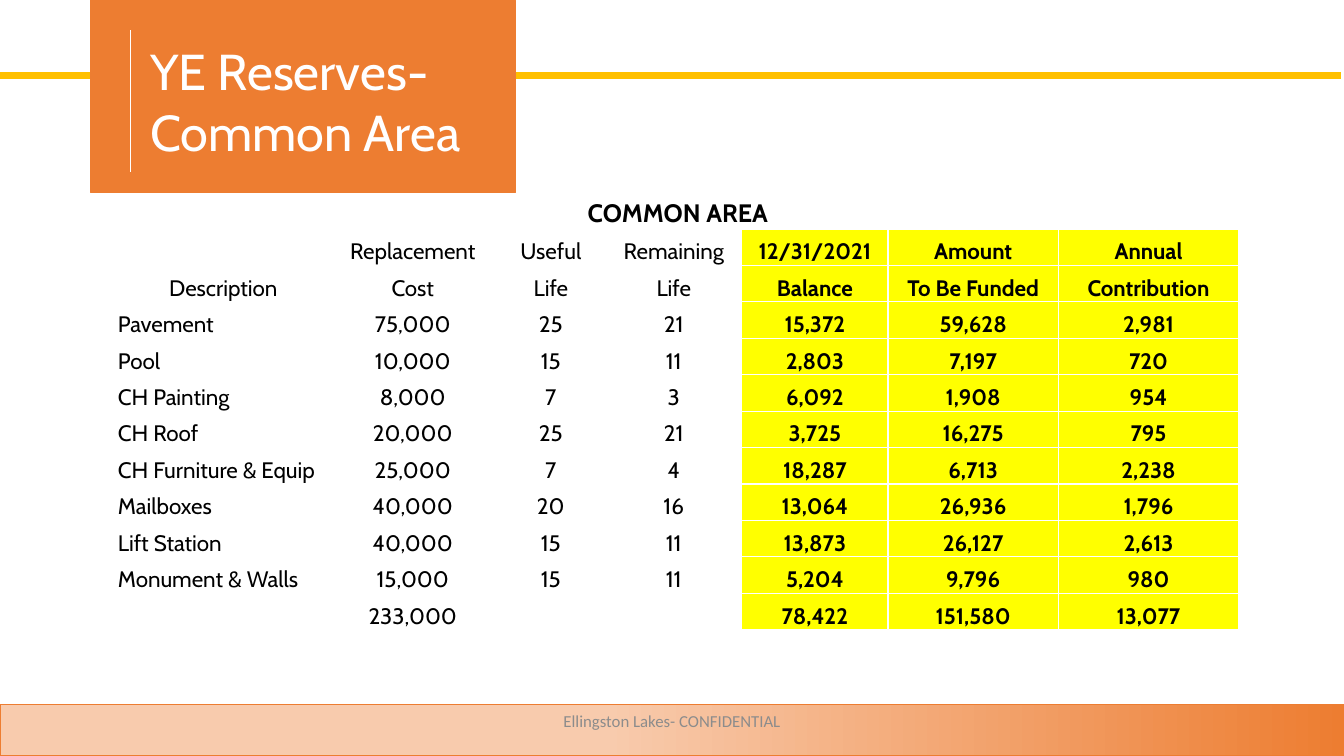
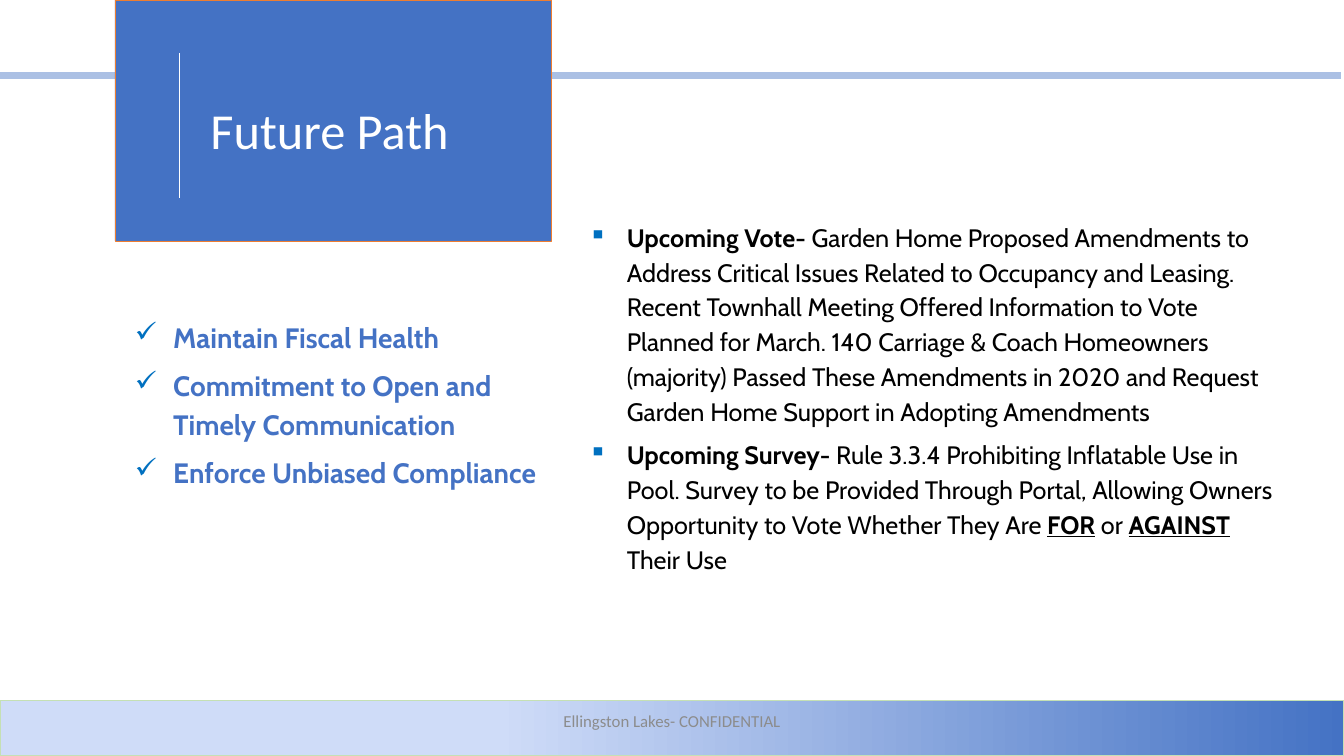
from dataclasses import dataclass

from lxml.etree import SubElement
from pptx import Presentation
from pptx.dml.color import RGBColor
from pptx.enum.shapes import MSO_CONNECTOR, MSO_SHAPE
from pptx.enum.text import MSO_ANCHOR, PP_ALIGN
from pptx.oxml import parse_xml
from pptx.oxml.ns import nsdecls, qn
from pptx.slide import Slide
from pptx.table import _Cell
from pptx.text.text import Font, TextFrame
from pptx.util import Emu, Inches, Pt

# Grid: 80 columns by 45 rows
SLIDE_WIDTH, SLIDE_HEIGHT = Inches(13.33), Inches(7.5)
COLUMNS, ROWS = 80, 45

# Colours and fonts
WHITE, BLACK, GREY = "FFFFFF", "000000", "8C8C8C"
ORANGE, GOLD, YELLOW = "ED7D31", "FFC000", "FFFF00"
BLUE, BULLET_BLUE = "4472C4", "0070C0"
HEADING_FONT, PLAIN_FONT = "Cabin", "Calibri"
FOOTER_TEXT = "Ellingston Lakes- CONFIDENTIAL"


@dataclass(frozen=True)
class Box:
    """An area in grid columns and rows."""
    left: float
    top: float
    width: float
    height: float


@dataclass(frozen=True)
class Theme:
    """What differs between the frames of the slides."""
    band: str
    block: Box
    block_fill: str
    title: Box
    title_font: str
    rule_left: float
    rule_top: float
    rule_bottom: float
    footer_top: float
    footer_start: float
    footer_light: str
    footer_dark: str
    footer_line: str


@dataclass(frozen=True)
class Run:
    text: str
    bold: bool = False
    underline: bool = False


@dataclass(frozen=True)
class BulletList:
    box: Box
    mark: str
    size: float
    color: str
    items: tuple[tuple[Run, ...], ...]


RESERVES_THEME = Theme(
    band=GOLD, block=Box(5.4, 0, 25.3, 11.46), block_fill=ORANGE,
    title=Box(8.34, 2.1, 22.4, 8.5), title_font=HEADING_FONT,
    rule_left=7.74, rule_top=1.8, rule_bottom=10.26,
    footer_top=41.94, footer_start=0.45, footer_light="F8CBAD",
    footer_dark=ORANGE, footer_line=ORANGE)

FUTURE_THEME = Theme(
    band="ABC0E4", block=Box(6.84, 0, 26, 14.34), block_fill=BLUE,
    title=Box(11.94, 5.6, 17.3, 4.2), title_font=PLAIN_FONT,
    rule_left=10.7, rule_top=3.18, rule_bottom=11.8,
    footer_top=41.7, footer_start=0.37, footer_light="CFDCF8",
    footer_dark=BLUE, footer_line="C5E0B4")

TABLE_LEFT, TABLE_TOP, TABLE_ROW = 6.96, 11.46, 2.17
TABLE_COLUMNS = (12.66, 9.9, 6.54, 8.1, 8.7, 10.14, 10.74)
HEADER_ROWS, FIRST_HIGHLIGHT = 3, 4
RESERVES = (
    ("COMMON AREA", "", "", "", "", "", ""),
    ("", "Replacement", "Useful", "Remaining", "12/31/2021", "Amount", "Annual"),
    ("Description", "Cost", "Life", "Life", "Balance", "To Be Funded", "Contribution"),
    ("Pavement", "75,000", "25", "21", "15,372", "59,628", "2,981"),
    ("Pool", "10,000", "15", "11", "2,803", "7,197", "720"),
    ("CH Painting", "8,000", "7", "3", "6,092", "1,908", "954"),
    ("CH Roof", "20,000", "25", "21", "3,725", "16,275", "795"),
    ("CH Furniture & Equip", "25,000", "7", "4", "18,287", "6,713", "2,238"),
    ("Mailboxes", "40,000", "20", "16", "13,064", "26,936", "1,796"),
    ("Lift Station", "40,000", "15", "11", "13,873", "26,127", "2,613"),
    ("Monument & Walls", "15,000", "15", "11", "5,204", "9,796", "980"),
    ("", "233,000", "", "", "78,422", "151,580", "13,077"),
)

GOALS = BulletList(
    Box(7.44, 18.48, 26.64, 16.9), "✓", 20, BLUE,
    ((Run("Maintain Fiscal Health", bold=True),),
     (Run("Commitment to Open and Timely Communication", bold=True),),
     (Run("Enforce Unbiased Compliance", bold=True),)))

UPCOMING = BulletList(
    Box(34.44, 12.66, 42.66, 27.8), "▪", 18, BLACK,
    ((Run("Upcoming Vote- ", bold=True),
      Run("Garden Home Proposed Amendments to Address Critical Issues Related to "
          "Occupancy and Leasing. Recent Townhall Meeting Offered Information to "
          "Vote Planned for March. 140 Carriage & Coach Homeowners (majority) "
          "Passed These Amendments in 2020 and Request Garden Home Support in "
          "Adopting Amendments")),
     (Run("Upcoming Survey- ", bold=True),
      Run("Rule 3.3.4 Prohibiting Inflatable Use in Pool. Survey to be Provided "
          "Through Portal, Allowing Owners Opportunity to Vote Whether They Are "),
      Run("FOR", bold=True, underline=True),
      Run(" or "),
      Run("AGAINST", bold=True, underline=True),
      Run(" Their Use"))))


def across(columns: float) -> Emu:
    return Emu(round(SLIDE_WIDTH * columns / COLUMNS))


def down(rows: float) -> Emu:
    return Emu(round(SLIDE_HEIGHT * rows / ROWS))


def place(box: Box) -> tuple[Emu, Emu, Emu, Emu]:
    return across(box.left), down(box.top), across(box.width), down(box.height)


def color_of(value: str) -> RGBColor:
    return RGBColor.from_string(value)


def set_font(font: Font, name: str, size: float, color: str) -> None:
    font.name = name
    font.size = Pt(size)
    font.color.rgb = color_of(color)


def add_line(slide: Slide, start: tuple[float, float], end: tuple[float, float],
             color: str, width: float) -> None:
    line = slide.shapes.add_connector(
        MSO_CONNECTOR.STRAIGHT, across(start[0]), down(start[1]),
        across(end[0]), down(end[1]))
    line.line.color.rgb = color_of(color)
    line.line.width = Pt(width)
    SubElement(line._element.spPr, qn("a:effectLst"))


def add_rectangle(slide: Slide, box: Box, line_color: str, line_width: float,
                  colors: tuple[str, ...], start: float = 0) -> None:
    """Fill with one colour, or with a left-to-right gradient of two."""
    shape = slide.shapes.add_shape(MSO_SHAPE.RECTANGLE, *place(box))
    shape.shadow.inherit = False
    shape.line.color.rgb = color_of(line_color)
    shape.line.width = Pt(line_width)
    if len(colors) == 1:
        shape.fill.solid()
        shape.fill.fore_color.rgb = color_of(colors[0])
        return
    shape.fill.gradient()
    shape.fill.gradient_angle = 0
    for stop, color, position in zip(shape.fill.gradient_stops, colors, (start, 1)):
        stop.color.rgb = color_of(color)
        stop.position = position


def add_text_frame(slide: Slide, box: Box) -> TextFrame:
    frame = slide.shapes.add_textbox(*place(box)).text_frame
    frame.word_wrap = True
    return frame


def add_frame(slide: Slide, theme: Theme, title: str) -> None:
    """Draw the band, title block and footer that every slide has."""
    add_line(slide, (0, 4.5), (79.8, 4.5), theme.band, 4.5)
    add_rectangle(slide, theme.block, ORANGE, 0.5, (theme.block_fill,))
    title_frame = add_text_frame(slide, theme.title)
    title_frame.text = title
    for paragraph in title_frame.paragraphs:
        set_font(paragraph.font, theme.title_font, 36, WHITE)
    add_line(slide, (theme.rule_left, theme.rule_top),
             (theme.rule_left, theme.rule_bottom), WHITE, 0.5)

    footer = Box(0, theme.footer_top, COLUMNS, ROWS - theme.footer_top)
    add_rectangle(slide, footer, theme.footer_line, 1,
                  (theme.footer_light, theme.footer_dark), theme.footer_start)
    footer_frame = add_text_frame(slide, Box(26.5, 41.7, 27, 2.4))
    footer_frame.vertical_anchor = MSO_ANCHOR.MIDDLE
    paragraph = footer_frame.paragraphs[0]
    paragraph.text = FOOTER_TEXT
    paragraph.alignment = PP_ALIGN.CENTER
    set_font(paragraph.font, PLAIN_FONT, 12, GREY)


def set_borders(cell: _Cell, color: str, width: float) -> None:
    properties = cell._tc.get_or_add_tcPr()
    for index, side in enumerate(("lnL", "lnR", "lnT", "lnB")):
        properties.insert(index, parse_xml(
            f'<a:{side} {nsdecls("a")} w="{Pt(width)}"><a:solidFill>'
            f'<a:srgbClr val="{color}"/></a:solidFill></a:{side}>'))


def style_cell(cell: _Cell, text: str, row: int, column: int) -> None:
    cell.margin_left = cell.margin_right = cell.margin_top = Inches(0.01)
    cell.margin_bottom = 0
    cell.vertical_anchor = MSO_ANCHOR.BOTTOM
    highlighted = row > 0 and column >= FIRST_HIGHLIGHT
    if highlighted:
        cell.fill.solid()
        cell.fill.fore_color.rgb = color_of(YELLOW)
    else:
        cell.fill.background()
    set_borders(cell, WHITE, 1)
    paragraph = cell.text_frame.paragraphs[0]
    paragraph.text = text
    is_label = column == 0 and row >= HEADER_ROWS
    paragraph.alignment = PP_ALIGN.LEFT if is_label else PP_ALIGN.CENTER
    set_font(paragraph.font, HEADING_FONT, 18 if row == 0 else 16, BLACK)
    paragraph.font.bold = row == 0 or highlighted


def add_reserves_table(slide: Slide) -> None:
    box = Box(TABLE_LEFT, TABLE_TOP, sum(TABLE_COLUMNS), TABLE_ROW * len(RESERVES))
    table = slide.shapes.add_table(
        len(RESERVES), len(TABLE_COLUMNS), *place(box)).table
    table.first_row = table.horz_banding = False
    for column, width in zip(table.columns, TABLE_COLUMNS):
        column.width = across(width)
    for row in table.rows:
        row.height = down(TABLE_ROW)
    table.cell(0, 0).merge(table.cell(0, len(TABLE_COLUMNS) - 1))
    for row_index, texts in enumerate(RESERVES):
        for column_index, text in enumerate(texts):
            style_cell(table.cell(row_index, column_index), text,
                       row_index, column_index)


def add_bullet_list(slide: Slide, bullets: BulletList) -> None:
    frame = add_text_frame(slide, bullets.box)
    for index, runs in enumerate(bullets.items):
        paragraph = frame.add_paragraph() if index else frame.paragraphs[0]
        paragraph.line_spacing = 1.15
        paragraph.space_before = Pt(0.35 * bullets.size)
        set_font(paragraph.font, HEADING_FONT, bullets.size, bullets.color)
        for part in runs:
            run = paragraph.add_run()
            run.text = part.text
            run.font.bold = part.bold
            run.font.underline = part.underline
        # Hanging indent and bullet mark
        properties = paragraph._p.get_or_add_pPr()
        properties.set("marL", str(Inches(0.38)))
        properties.set("indent", str(-Inches(0.38)))
        mark = parse_xml(f'<a:buChar {nsdecls("a")} char="{bullets.mark}"/>')
        color = parse_xml(f'<a:buClr {nsdecls("a")}>'
                          f'<a:srgbClr val="{BULLET_BLUE}"/></a:buClr>')
        defaults = properties.find(qn("a:defRPr"))
        defaults.addprevious(color)
        defaults.addprevious(mark)


def main() -> None:
    presentation = Presentation()
    presentation.slide_width, presentation.slide_height = SLIDE_WIDTH, SLIDE_HEIGHT
    blank = presentation.slide_layouts[6]

    # Reserves
    reserves_slide = presentation.slides.add_slide(blank)
    add_reserves_table(reserves_slide)
    add_frame(reserves_slide, RESERVES_THEME, "YE Reserves-\nCommon Area")

    # Future path
    future_slide = presentation.slides.add_slide(blank)
    add_frame(future_slide, FUTURE_THEME, "Future Path")
    for bullets in (GOALS, UPCOMING):
        add_bullet_list(future_slide, bullets)

    presentation.save("out.pptx")


if __name__ == "__main__":
    main()
